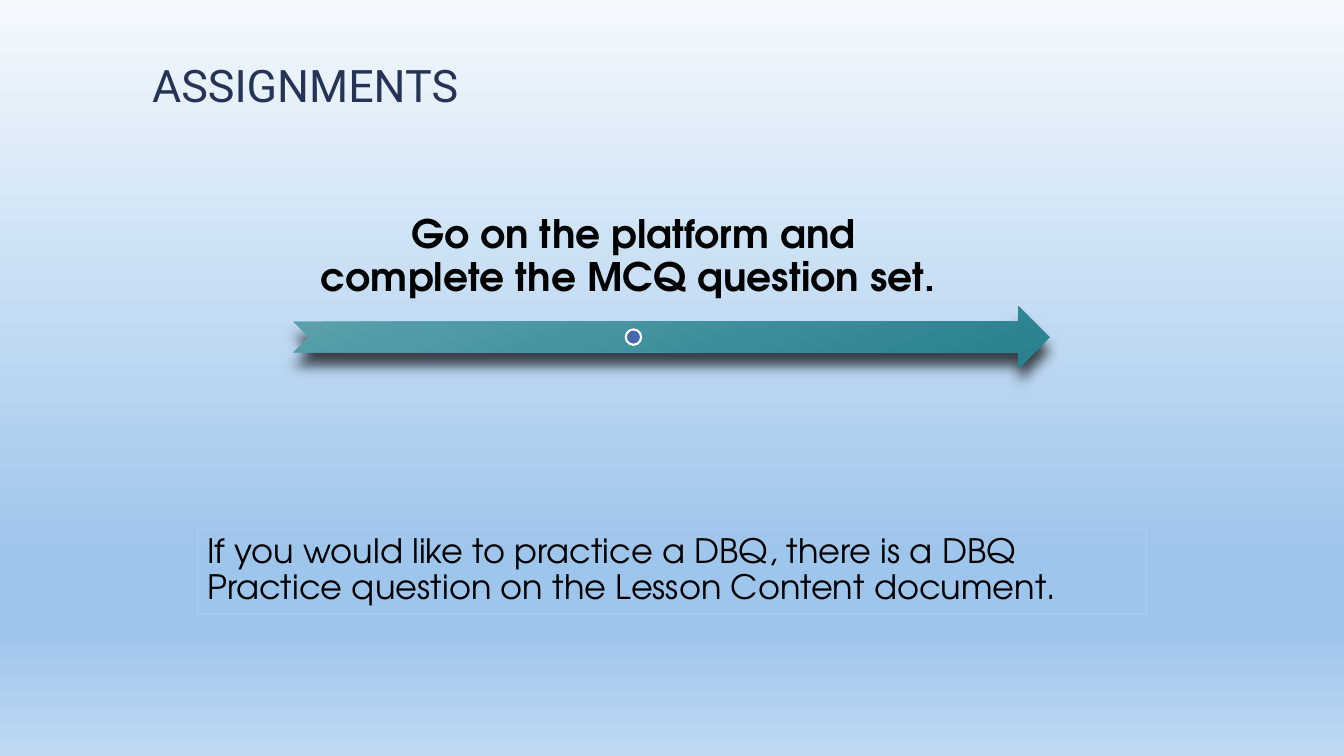
from dataclasses import dataclass

from lxml.etree import SubElement
from pptx import Presentation
from pptx.dml.color import RGBColor
from pptx.enum.shapes import MSO_SHAPE as Shape
from pptx.enum.text import MSO_ANCHOR as Anchor, MSO_AUTO_SIZE as AutoSize, PP_ALIGN as Align
from pptx.oxml.ns import qn
from pptx.util import Pt


@dataclass(frozen=True)
class Theme:
    heading_font: str = "Roboto"
    body_font: str = "TeX Gyre Adventor"
    heading_size: float = 32
    task_size: float = 28
    note_size: float = 24
    heading: str = "253356"
    ink: str = "000000"
    dot: str = "4A66AC"
    dot_line: str = "FFFFFF"
    note_line: str = "ACCBF9"
    sky: tuple = ((0, "F4F9FD"), (74, "9EC5EC"), (83, "9EC5EC"), (100, "BFD9F3"))
    teal: tuple = ((0, "5AA2AE"), (100, "277F8E"))


THEME = Theme()


def place(box):
    return [Pt(length) for length in box]


def write(shape, text, font=THEME.body_font, size=THEME.note_size, color=THEME.ink,
          bold=False, align=Align.LEFT, anchor=Anchor.TOP, inset=(7.2, 3.6)):
    frame = shape.text_frame
    frame.word_wrap = True
    frame.auto_size = AutoSize.NONE
    frame.vertical_anchor = anchor
    frame.margin_left = frame.margin_right = Pt(inset[0])
    frame.margin_top = frame.margin_bottom = Pt(inset[1])
    paragraph = frame.paragraphs[0]
    paragraph.alignment = align
    paragraph.line_spacing = 0.9
    paragraph.space_before = Pt(0)
    run = paragraph.add_run()
    run.text = text
    run.font.name, run.font.size, run.font.bold = font, Pt(size), bold
    run.font.color.rgb = RGBColor.from_string(color)


def shade(fill, element, stops, angle):
    fill.gradient()
    fill.gradient_angle = 360 - angle
    stop_list = next(element.iter(qn("a:gsLst")))
    for old in list(stop_list):
        stop_list.remove(old)
    for percent, color in stops:
        stop = SubElement(stop_list, qn("a:gs"), pos=str(percent * 1000))
        SubElement(stop, qn("a:srgbClr"), val=color)


def drop_shadow(shape, blur, distance, opacity):
    effects = next(shape.element.iter(qn("a:effectLst")))
    shadow = SubElement(effects, qn("a:outerShdw"), blurRad=str(Pt(blur)),
                        dist=str(Pt(distance)), dir="5400000", rotWithShape="0")
    color = SubElement(shadow, qn("a:srgbClr"), val=THEME.ink)
    SubElement(color, qn("a:alpha"), val=str(opacity * 1000))


def add_plain_shape(slide, preset, box):
    shape = slide.shapes.add_shape(preset, *place(box))
    shape.shadow.inherit = False
    return shape


def add_heading(slide, box):
    heading = slide.shapes.title
    heading.left, heading.top, heading.width, heading.height = place(box)
    write(heading, "ASSIGNMENTS", font=THEME.heading_font, size=THEME.heading_size,
          color=THEME.heading, anchor=Anchor.BOTTOM)


def add_timeline(slide, box):
    left, top, width, height = box
    bar = 44
    task_width = width * 0.9
    arrow_top = top + height - bar

    arrow = add_plain_shape(slide, Shape.NOTCHED_RIGHT_ARROW, (left, arrow_top, width, bar))
    shade(arrow.fill, arrow.element, THEME.teal, 69)
    arrow.line.fill.background()
    drop_shadow(arrow, blur=9, distance=9, opacity=70)

    task = slide.shapes.add_textbox(*place((left, top, task_width, bar)))
    write(task, "Go on the platform and complete the MCQ question set. ", size=THEME.task_size,
          bold=True, align=Align.CENTER, anchor=Anchor.BOTTOM, inset=(15.8, 15.8))

    size = 11
    dot = add_plain_shape(slide, Shape.OVAL, (left + (task_width - size) / 2,
                                              arrow_top + (bar - size) / 2, size, size))
    dot.fill.solid()
    dot.fill.fore_color.rgb = RGBColor.from_string(THEME.dot)
    dot.line.color.rgb = RGBColor.from_string(THEME.dot_line)
    dot.line.width = Pt(1.5)


def add_note(slide, box):
    note = add_plain_shape(slide, Shape.RECTANGLE, box)
    note.fill.background()
    note.line.color.rgb = RGBColor.from_string(THEME.note_line)
    note.line.width = Pt(0.75)
    write(note, "If you would like to practice a DBQ, there is a DBQ Practice question "
                "on the Lesson Content document.")


def add_assignments_slide(deck):
    slide = deck.slides.add_slide(deck.slide_layouts[5])
    shade(slide.background.fill, slide.element, THEME.sky, 90)
    add_heading(slide, (101.5, 36, 720, 48))
    add_timeline(slide, (209.5, 185.8, 540, 77))
    add_note(slide, (141, 378, 678, 60))


def main():
    deck = Presentation()
    deck.slide_width, deck.slide_height = Pt(960), Pt(540)
    add_assignments_slide(deck)
    deck.save("out.pptx")


if __name__ == "__main__":
    main()
